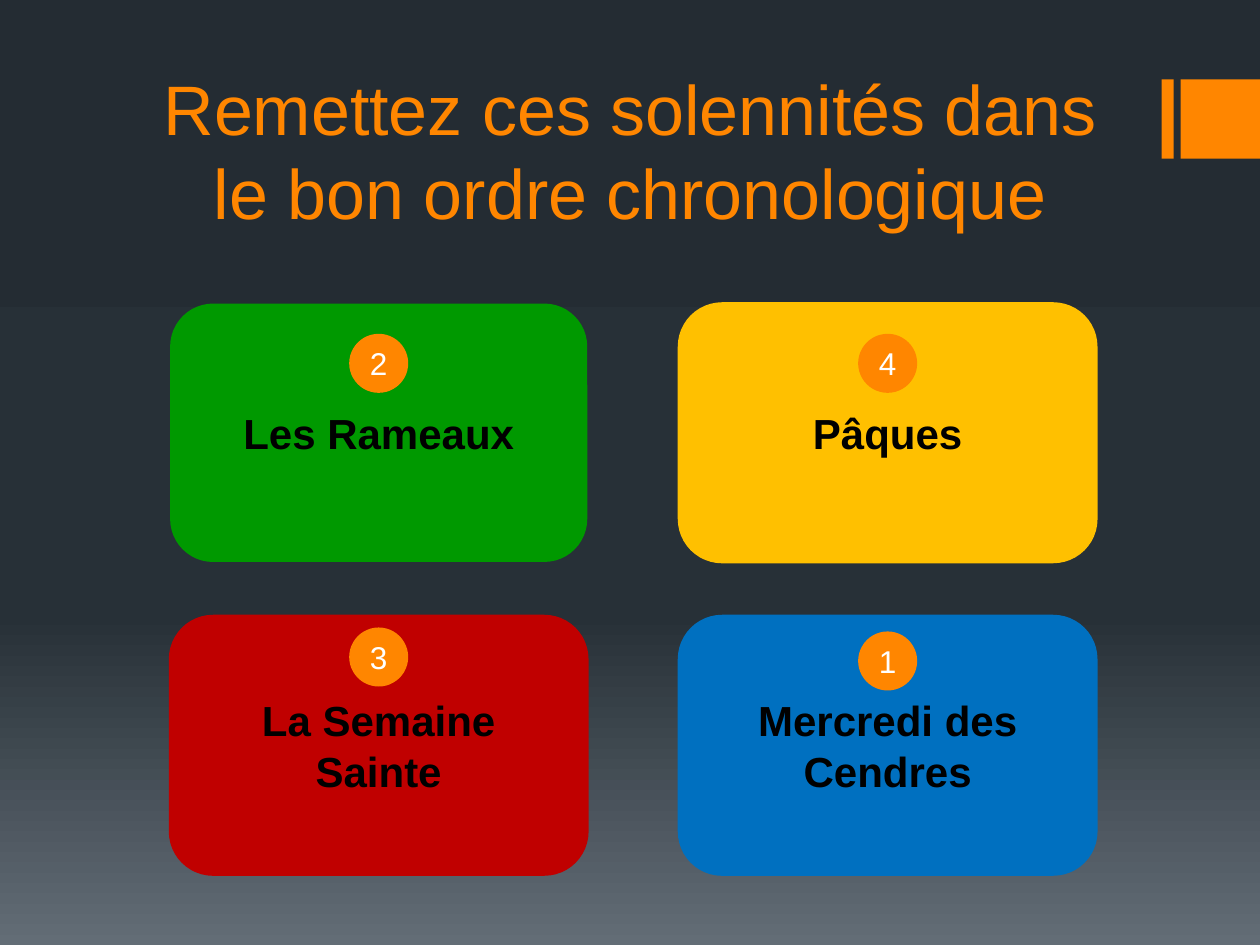
from copy import deepcopy
from dataclasses import dataclass

from pptx import Presentation
from pptx.dml.color import RGBColor
from pptx.enum.shapes import MSO_SHAPE
from pptx.enum.text import MSO_ANCHOR, PP_ALIGN
from pptx.shapes.autoshape import Shape
from pptx.slide import Slide
from pptx.util import Cm, Pt


@dataclass(frozen=True)
class Theme:
    accent: str = "FF8600"
    card_text: str = "000000"
    badge_text: str = "FFFFFF"
    background: tuple = ((0, "242C33"), (0.65, "273037"), (1, "636D76"))
    font: str = "Arial"
    title_size: int = 40
    card_size: int = 24
    badge_size: int = 18


@dataclass(frozen=True)
class Card:
    label: str
    rank: int
    col: int
    row: int
    color: str
    badge_drop: float
    outlined: bool = True


THEME = Theme()
CARD_W, CARD_H = 8.41, 5.21
CARD_LEFT, CARD_TOP = 3.43, 6.12
COL_STEP, ROW_STEP = 10.26, 6.3
BADGE = 1.19
BAR_TOP, BAR_H = 1.6, 1.6

CARDS = [
    Card("Les Rameaux", 2, 0, 0, "009900", 0.61, outlined=False),
    Card("Pâques", 4, 1, 0, "FFC000", 0.61),
    Card("La Semaine Sainte", 3, 0, 1, "C00000", 0.23),
    Card("Mercredi des Cendres", 1, 1, 1, "0070C0", 0.31),
]


def paint_background(s: Slide) -> None:
    fill = s.background.fill
    fill.gradient()
    fill.gradient_angle = 270
    first = s.element.xpath(".//a:gs")[0]
    first.addnext(deepcopy(first))
    for stop, (position, color) in zip(fill.gradient_stops, THEME.background):
        stop.position = position
        stop.color.rgb = RGBColor.from_string(color)


def write(sp: Shape, text: str, size: int, color: str, bold: bool = False,
          margin: float = 0.25) -> None:
    tf = sp.text_frame
    frame_format = {"word_wrap": True, "vertical_anchor": MSO_ANCHOR.MIDDLE,
                    "margin_left": Cm(margin), "margin_right": Cm(margin)}
    for name, value in frame_format.items():
        setattr(tf, name, value)
    p = tf.paragraphs[0]
    p.alignment = PP_ALIGN.CENTER
    r = p.add_run()
    r.text = text
    for name, value in {"name": THEME.font, "size": Pt(size), "bold": bold}.items():
        setattr(r.font, name, value)
    r.font.color.rgb = RGBColor.from_string(color)


def add_block(s: Slide, kind: MSO_SHAPE, left: float, top: float, width: float,
              height: float, color: str, outlined: bool = False) -> Shape:
    sp = s.shapes.add_shape(kind, Cm(left), Cm(top), Cm(width), Cm(height))
    sp.shadow.inherit = False
    sp.fill.solid()
    sp.fill.fore_color.rgb = RGBColor.from_string(color)
    if outlined:
        sp.line.color.rgb = RGBColor.from_string(color)
        sp.line.width = Pt(1.5)
    else:
        sp.line.fill.background()
    return sp


def add_card(s: Slide, card: Card) -> None:
    """Draw a card with its rank badge centred near the top."""
    left = CARD_LEFT + card.col * COL_STEP
    top = CARD_TOP + card.row * ROW_STEP
    sp = add_block(s, MSO_SHAPE.ROUNDED_RECTANGLE, left, top, CARD_W, CARD_H,
                   card.color, card.outlined)
    write(sp, card.label, THEME.card_size, THEME.card_text, bold=True, margin=0.5)
    badge = add_block(s, MSO_SHAPE.OVAL, left + (CARD_W - BADGE) / 2,
                      top + card.badge_drop, BADGE, BADGE, THEME.accent)
    write(badge, str(card.rank), THEME.badge_size, THEME.badge_text, margin=0)


def main() -> None:
    prs = Presentation()
    prs.slide_width, prs.slide_height = Cm(25.4), Cm(19.05)
    s = prs.slides.add_slide(prs.slide_layouts[6])
    paint_background(s)
    for left, width in ((23.42, 0.24), (23.8, 1.6)):
        add_block(s, MSO_SHAPE.RECTANGLE, left, BAR_TOP, width, BAR_H, THEME.accent)
    title = s.shapes.add_textbox(Cm(2.54), Cm(0.91), Cm(20.32), Cm(4.19))
    write(title, "Remettez ces solennités dans le bon ordre chronologique",
          THEME.title_size, THEME.accent)
    for card in CARDS:
        add_card(s, card)
    prs.save("out.pptx")


if __name__ == "__main__":
    main()
